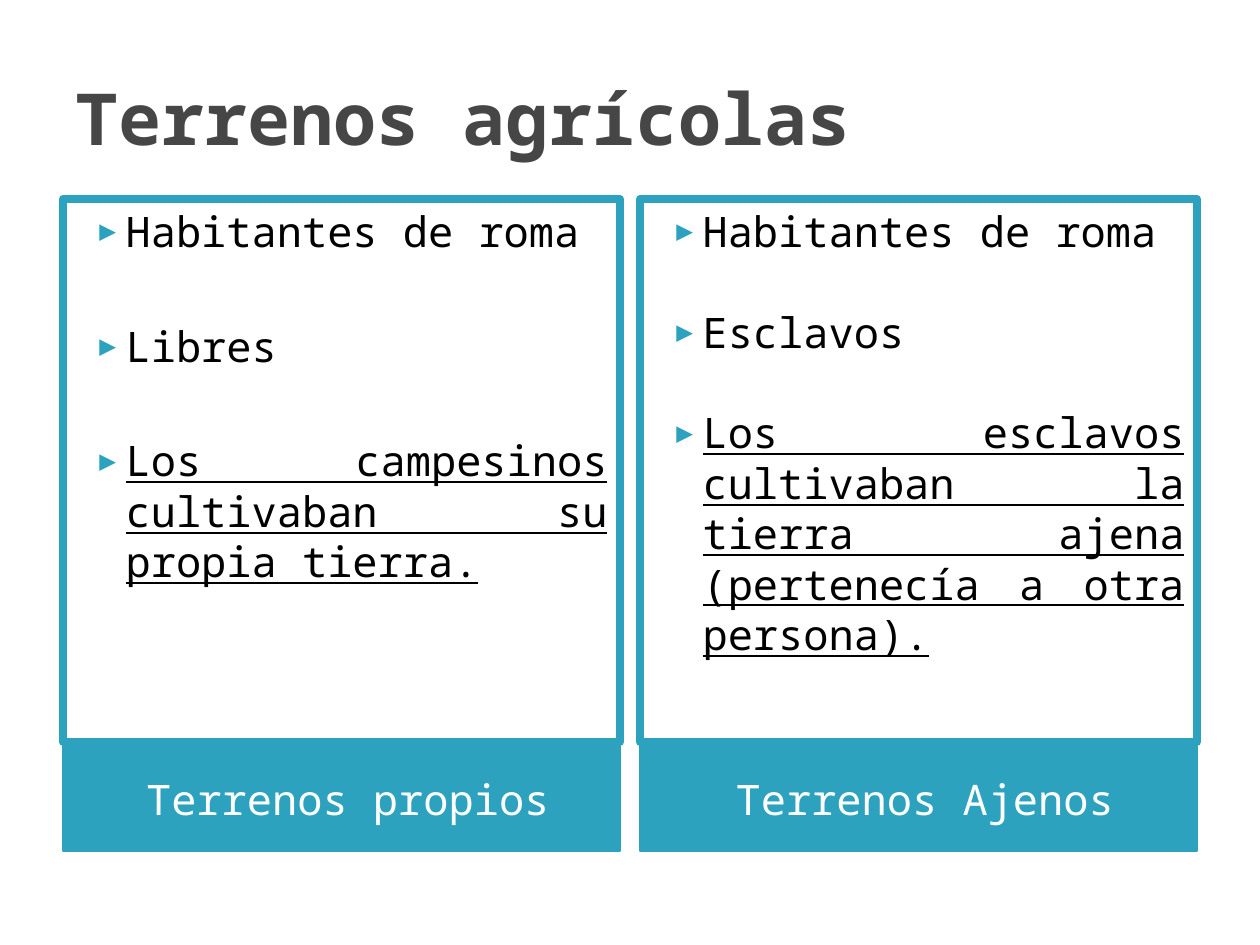
from lxml import etree
from pptx import Presentation
from pptx.dml.color import RGBColor
from pptx.enum.text import MSO_ANCHOR, MSO_AUTO_SIZE, PP_ALIGN
from pptx.oxml.ns import qn
from pptx.util import Pt

PX = 914400 // 126
LEFT, CENTER, JUSTIFY = PP_ALIGN.LEFT, PP_ALIGN.CENTER, PP_ALIGN.JUSTIFY
TOP, MIDDLE = MSO_ANCHOR.TOP, MSO_ANCHOR.MIDDLE
COMPARISON_LAYOUT = 4

THEME = {
    "font": "Noto Sans Mono",
    "accent": "2DA2BF", "paper": "FFFFFF", "ink": "000000", "heading": "464646",
    "title_size": 41, "body_size": 24,
    "frame_line": 4.5, "label_line": 0.75, "bullet_percent": 68,
}


def prepare(shape, box, anchor):
    """Place a placeholder and return its text frame."""
    for name, value in zip(("left", "top", "width", "height"), box):
        setattr(shape, name, value * PX)
    frame = shape.text_frame
    settings = {"word_wrap": True, "auto_size": MSO_AUTO_SIZE.NONE, "vertical_anchor": anchor}
    for name, value in settings.items():
        setattr(frame, name, value)
    return frame


def write(paragraph, text, size, color, align, before=0, **font_format):
    """Add one formatted run to a paragraph."""
    paragraph.alignment = align
    paragraph.space_before = Pt(before)
    run = paragraph.add_run()
    run.text = text
    values = {"name": THEME["font"], "size": Pt(size), "bold": False, **font_format}
    for name, value in values.items():
        setattr(run.font, name, value)
    run.font.color.rgb = RGBColor.from_string(color)


presentation = Presentation()
presentation.slide_width = 1260 * PX
presentation.slide_height = 945 * PX
slide = presentation.slides.add_slide(presentation.slide_layouts[COMPARISON_LAYOUT])
placeholders = {shape.placeholder_format.idx: shape for shape in slide.placeholders}

# Title
title = prepare(placeholders[0], (63, 38, 1134, 158), MIDDLE)
write(title.paragraphs[0], "Terrenos agrícolas", THEME["title_size"], THEME["heading"], LEFT, bold=True)

# Two columns: label text, gap between items in points, items
columns = [
    ("Terrenos propios", 36.8,
     ["Habitantes de roma", "Libres", "Los campesinos cultivaban su propia tierra."]),
    ("Terrenos Ajenos", 28.8,
     ["Habitantes de roma", "Esclavos",
      "Los esclavos cultivaban la tierra ajena (pertenecía a otra persona)."]),
]
column_width, column_step = 557, 577

for number, (label_text, gap, items) in enumerate(columns):
    left = 63 + number * column_step
    label, content = placeholders[1 + 2 * number], placeholders[2 + 2 * number]

    # Fills and borders
    for shape, fill, line_width in ((label, "accent", "label_line"), (content, "paper", "frame_line")):
        shape.fill.solid()
        shape.fill.fore_color.rgb = RGBColor.from_string(THEME[fill])
        shape.line.color.rgb = RGBColor.from_string(THEME["accent"])
        shape.line.width = Pt(THEME[line_width])

    # Label under the frame
    label_frame = prepare(label, (left, 746, column_width, 105), MIDDLE)
    label_frame.margin_left = 25 * PX
    write(label_frame.paragraphs[0], label_text, THEME["body_size"], THEME["paper"], CENTER)

    # Bulleted list; the last item is the underlined conclusion
    list_frame = prepare(content, (left, 199, column_width, 543), TOP)
    for index, item in enumerate(items):
        paragraph = list_frame.add_paragraph() if index else list_frame.paragraphs[0]
        is_last = index == len(items) - 1
        write(paragraph, item, THEME["body_size"], THEME["ink"], JUSTIFY if is_last else LEFT,
              before=gap if index else 0, underline=is_last)
        properties = paragraph._p.get_or_add_pPr()
        properties.set("marL", str(50 * PX))
        properties.set("indent", str(-35 * PX))
        bullet_color = etree.SubElement(properties, qn("a:buClr"))
        etree.SubElement(bullet_color, qn("a:srgbClr"), val=THEME["accent"])
        etree.SubElement(properties, qn("a:buSzPct"), val=str(THEME["bullet_percent"] * 1000))
        etree.SubElement(properties, qn("a:buFont"), typeface=THEME["font"])
        etree.SubElement(properties, qn("a:buChar"), char="▶")

presentation.save("out.pptx")
